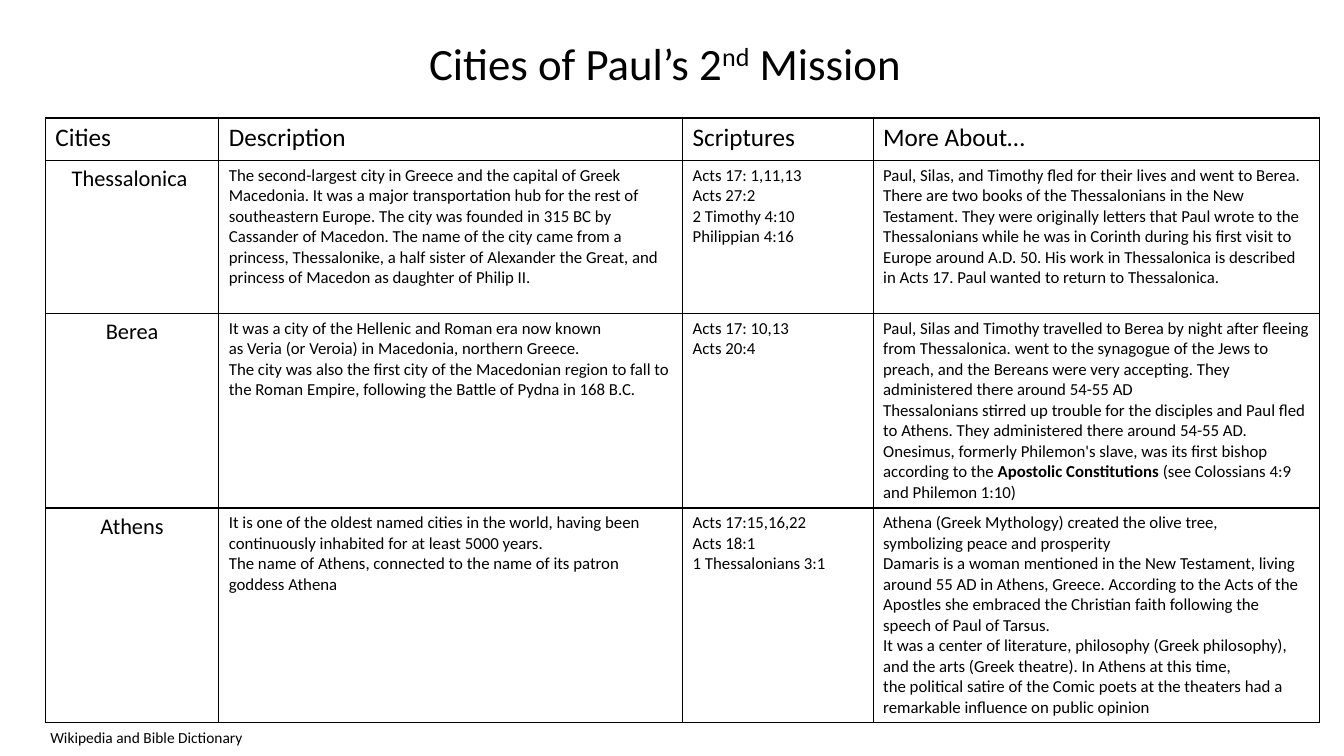
"""Build the slide on the cities of Paul's second mission."""
from lxml.etree import fromstring
from pptx import Presentation
from pptx.dml.color import RGBColor
from pptx.enum.text import MSO_ANCHOR, MSO_AUTO_SIZE, PP_ALIGN
from pptx.oxml.ns import nsdecls
from pptx.util import Inches, Pt

BLACK = RGBColor(0x00, 0x00, 0x00)
FONT = "Calibri"
NBSP = chr(160)
COLUMN_WIDTHS = [1.72, 4.6, 1.89, 4.43]
ROW_HEIGHTS = [0.42, 1.52, 1.93, 2.13]
HEADINGS = ["Cities", "Description", "Scriptures", "More About…"]
CITIES = [
    [
        ["Thessalonica "],
        ["The~second-largest city~in~Greece~and the~capital~of~Greek Macedonia. It was a major "
         "transportation hub for the rest of southeastern Europe. The city was founded in 315 BC "
         "by Cassander of Macedon. The name of the city came from a princess, Thessalonike, a half "
         "sister of Alexander the Great, and princess of Macedon as daughter of Philip II."],
        ["Acts 17: 1,11,13", "Acts 27:2", "2 Timothy 4:10", "Philippian 4:16"],
        ["Paul, Silas, and Timothy fled for their lives and went to Berea.",
         "There are two books of the Thessalonians in the New Testament. They were originally "
         "letters that Paul wrote to the Thessalonians while he was in Corinth during his first "
         "visit to Europe around A.D. 50. His work in~Thessalonica~is described in Acts 17. Paul "
         "wanted to return to~Thessalonica."],
    ],
    [
        ["Berea"],
        ["It was a city of the~Hellenic~and~Roman era~now known as~Veria~(or~Veroia) "
         "in~Macedonia, northern~Greece.",
         "The city was also the first~city~of the~Macedonian~region to fall to the~Roman Empire, "
         "following the~Battle of Pydna~in 168 B.C."],
        ["Acts 17: 10,13", "Acts 20:4"],
        ["Paul, Silas and Timothy travelled to Berea by night after fleeing from~Thessalonica. "
         "went to the~synagogue of the Jews~to preach, and the Bereans were very accepting. They "
         "administered there around 54-55 AD",
         "Thessalonians stirred up trouble for the disciples and Paul fled to Athens. They "
         "administered there around 54-55 AD.",
         "Onesimus, formerly Philemon's slave, was its first bishop according to the "
         "**Apostolic Constitutions **(see Colossians 4:9 and Philemon 1:10)"],
    ],
    [
        ["Athens"],
        ["It~is one of the oldest named cities in the world, having been continuously inhabited "
         "for at least 5000 years.",
         "The name of~Athens, connected to the name of its patron goddess~Athena"],
        ["Acts 17:15,16,22", "Acts 18:1", "1 Thessalonians 3:1"],
        ["Athena (Greek Mythology) created the~olive tree, symbolizing~peace~and prosperity",
         "Damaris~is a woman mentioned in the~New Testament, living around 55 AD in~Athens, "
         "Greece. According to the~Acts of the Apostles~she embraced the Christian faith "
         "following the speech of~Paul of Tarsus.",
         "It was a center of literature, philosophy (Greek philosophy), and the arts (Greek "
         "theatre). In Athens at this time, the~political satire~of the~Comic poets~at "
         "the~theaters~had a remarkable influence on~public opinion"],
    ],
]


def format_run(run, size, bold=False):
    """Give a run the slide's font and colour."""
    run.font.name = FONT
    run.font.size = Pt(size)
    run.font.bold = bold
    run.font.color.rgb = BLACK


def write_paragraphs(frame, lines, size, align=PP_ALIGN.LEFT):
    """Write one paragraph per line, with ~ as a fixed space and ** around bold words."""
    frame.text = "\n" * (len(lines) - 1)
    for paragraph, line in zip(frame.paragraphs, lines):
        paragraph.alignment = align
        for index, piece in enumerate(line.replace("~", NBSP).split("**")):
            run = paragraph.add_run()
            run.text = piece
            format_run(run, size, bold=index % 2 == 1)


def add_borders(cell):
    """Draw a thin black line on every side of a cell."""
    properties = cell._tc.get_or_add_tcPr()
    for index, side in enumerate(["lnL", "lnR", "lnT", "lnB"]):
        line = fromstring(
            f'<a:{side} {nsdecls("a")} w="{Pt(1)}"><a:solidFill>'
            f'<a:srgbClr val="{BLACK}"/></a:solidFill></a:{side}>')
        properties.insert(index, line)


def add_title(slide):
    """Place the title with its raised ordinal ending."""
    title = slide.shapes.title
    title.left, title.top = Inches(3.65), Inches(0.3)
    title.width, title.height = Inches(5.89), Inches(0.64)
    frame = title.text_frame
    frame.auto_size = MSO_AUTO_SIZE.NONE
    frame.vertical_anchor = MSO_ANCHOR.TOP
    heading = frame.paragraphs[0]
    heading.alignment = PP_ALIGN.CENTER
    for piece, baseline in [("Cities of Paul’s 2", 0), ("nd", 30000), (" Mission", 0)]:
        run = heading.add_run()
        run.text = piece
        format_run(run, 32)
        run._r.get_or_add_rPr().set("baseline", str(baseline))


def add_city_table(slide):
    """Add the table of cities with its heading row."""
    rows = [[[heading] for heading in HEADINGS]] + CITIES
    table = slide.shapes.add_table(
        len(rows), len(HEADINGS), Inches(0.45), Inches(1.17),
        Inches(sum(COLUMN_WIDTHS)), Inches(sum(ROW_HEIGHTS))).table
    table.first_row = table.horz_banding = False
    for column, width in zip(table.columns, COLUMN_WIDTHS):
        column.width = Inches(width)
    for row_index, (row, height) in enumerate(zip(rows, ROW_HEIGHTS)):
        table.rows[row_index].height = Inches(height)
        for column_index, lines in enumerate(row):
            cell = table.cell(row_index, column_index)
            is_city = row_index > 0 and column_index == 0
            size = 18 if row_index == 0 else 16 if is_city else 12
            align = PP_ALIGN.CENTER if is_city else PP_ALIGN.LEFT
            write_paragraphs(cell.text_frame, lines, size, align)
            cell.fill.background()
            add_borders(cell)


def add_sources(slide):
    """Add the line of sources under the table."""
    sources = slide.shapes.add_textbox(Inches(0.4), Inches(7.17), Inches(3.78), Inches(0.29))
    sources.text_frame.word_wrap = True
    write_paragraphs(sources.text_frame, ["Wikipedia and Bible Dictionary"], 11)


def main():
    """Build and save the slide."""
    presentation = Presentation()
    presentation.slide_width, presentation.slide_height = Inches(13.33), Inches(7.5)
    slide = presentation.slides.add_slide(presentation.slide_layouts.get_by_name("Title Only"))
    add_title(slide)
    add_city_table(slide)
    add_sources(slide)
    presentation.save("out.pptx")


if __name__ == "__main__":
    main()
